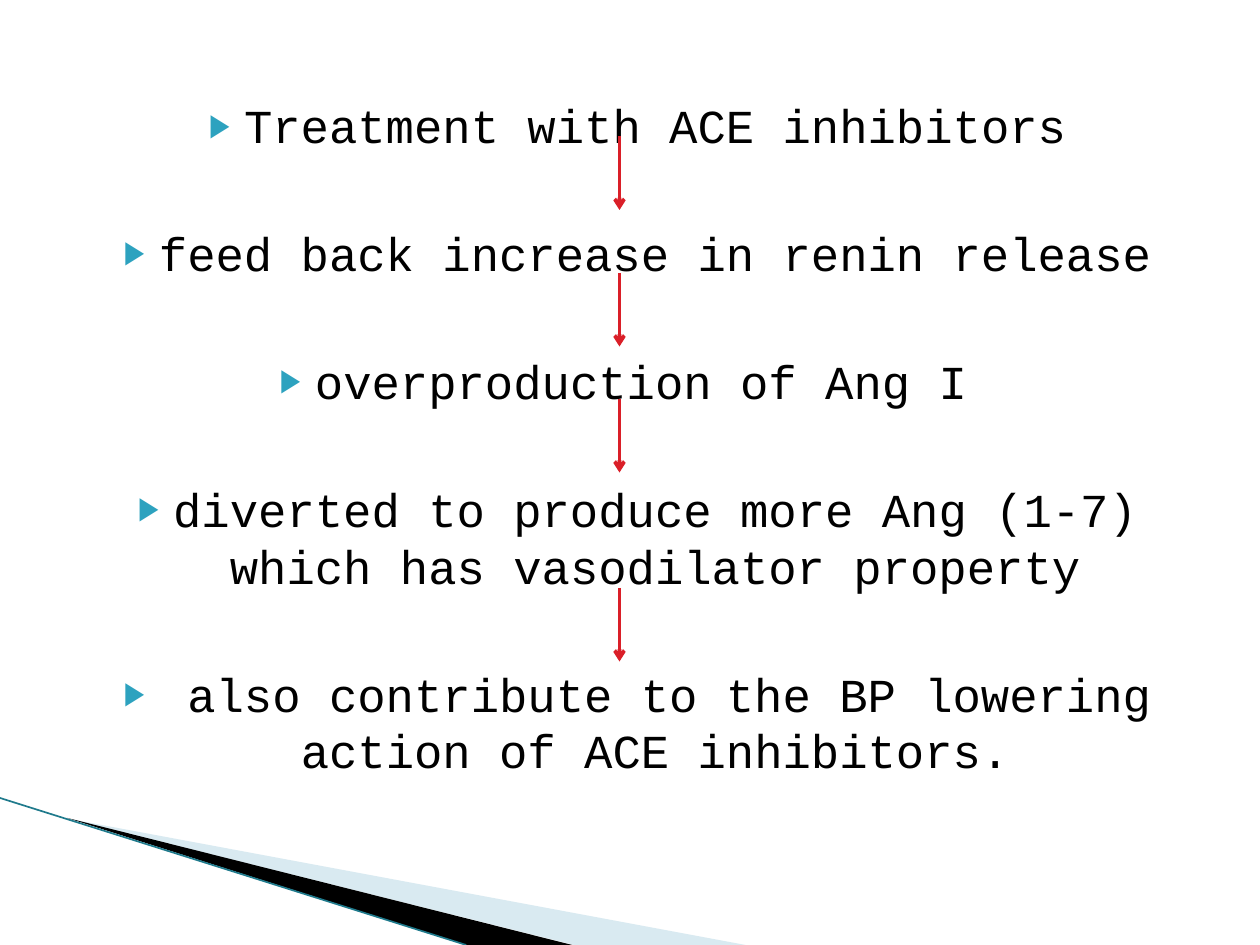
from lxml.etree import SubElement
from pptx import Presentation
from pptx.dml.color import RGBColor
from pptx.enum.shapes import MSO_CONNECTOR
from pptx.enum.text import MSO_ANCHOR, MSO_AUTO_SIZE, PP_ALIGN
from pptx.oxml.ns import qn
from pptx.util import Inches, Pt

COLOURS = {
    "text": "000000",
    "bullet": "2DA2BF",
    "arrow": "DA1F28",
    "pale": "A0CBDC",
    "dark": "000000",
    "edge": "1F7A8C",
}
COLUMNS, ROWS = 120, 90
WIDTH, HEIGHT = Inches(10), Inches(7.5)
STEPS = [
    "Treatment with ACE inhibitors",
    "feed back increase in renin release",
    "overproduction of Ang I ",
    "diverted to produce more Ang (1-7) which has vasodilator property",
    " also contribute to the BP lowering action of ACE inhibitors.",
]
ARROW_COLUMN, ARROW_LENGTH = 59, 7
ARROW_ROWS = [13, 26, 38, 56]


def across(columns):
    return round(WIDTH * columns / COLUMNS)


def down(rows):
    return round(HEIGHT * rows / ROWS)


def colour(name):
    return RGBColor.from_string(COLOURS[name])


def add_wedge(page, points, name, opacity=100):
    corners = [(across(column), down(row)) for column, row in points]
    builder = page.shapes.build_freeform(*corners[0], scale=1.0)
    builder.add_line_segments(corners[1:], close=True)
    wedge = builder.convert_to_shape()
    wedge.shadow.inherit = False
    wedge.line.fill.background()
    wedge.fill.solid()
    wedge.fill.fore_color.rgb = colour(name)
    if opacity < 100:
        tint = wedge.fill._xPr.find(qn("a:solidFill"))[0]
        SubElement(tint, qn("a:alpha"), val=str(opacity * 1000))


def add_line(page, start, end, name, weight, arrow=False):
    line = page.shapes.add_connector(
        MSO_CONNECTOR.STRAIGHT,
        across(start[0]), down(start[1]), across(end[0]), down(end[1]))
    line.line.color.rgb = colour(name)
    line.line.width = Pt(weight)
    if arrow:
        SubElement(line.line._get_or_add_ln(), qn("a:tailEnd"), type="arrow")
    SubElement(line._element.spPr, qn("a:effectLst"))


def add_bullet(para):
    props = para._p.get_or_add_pPr()
    props.set("marL", str(Inches(0.4)))
    props.set("indent", str(Inches(-0.28)))
    tint = SubElement(props, qn("a:buClr"))
    SubElement(tint, qn("a:srgbClr"), val=COLOURS["bullet"])
    SubElement(props, qn("a:buSzPct"), val="68000")
    SubElement(props, qn("a:buChar"), char="▶")


def fill_steps(body):
    body.left, body.top = across(6), down(8.6)
    body.width, body.height = across(108), down(74)
    frame = body.text_frame
    frame.auto_size = MSO_AUTO_SIZE.NONE
    frame.vertical_anchor = MSO_ANCHOR.TOP
    frame.text = "\n".join(STEPS)
    for index, para in enumerate(frame.paragraphs):
        add_bullet(para)
        para.alignment = PP_ALIGN.CENTER
        para.line_spacing = Pt(32.4)
        para.space_before = Pt(40.7 if index else 0)
        for span in para.runs:
            span.font.name = "Courier New"
            span.font.size = Pt(27)
            span.font.color.rgb = colour("text")


def main():
    deck = Presentation()
    deck.slide_width, deck.slide_height = WIDTH, HEIGHT
    page = deck.slides.add_slide(deck.slide_layouts[1])
    title = page.shapes.title._element
    title.getparent().remove(title)

    add_wedge(page, [(6.6, 78), (71, 90), (54.7, 90)], "pale", 40)
    add_wedge(page, [(6.4, 77.9), (54.5, 90), (44.4, 90)], "dark")
    add_line(page, (0, 76), (44.4, 90), "edge", 0.95)

    fill_steps(page.placeholders[1])
    for row in ARROW_ROWS:
        add_line(page, (ARROW_COLUMN, row), (ARROW_COLUMN, row + ARROW_LENGTH),
                 "arrow", 2, arrow=True)
    deck.save("out.pptx")


if __name__ == "__main__":
    main()
